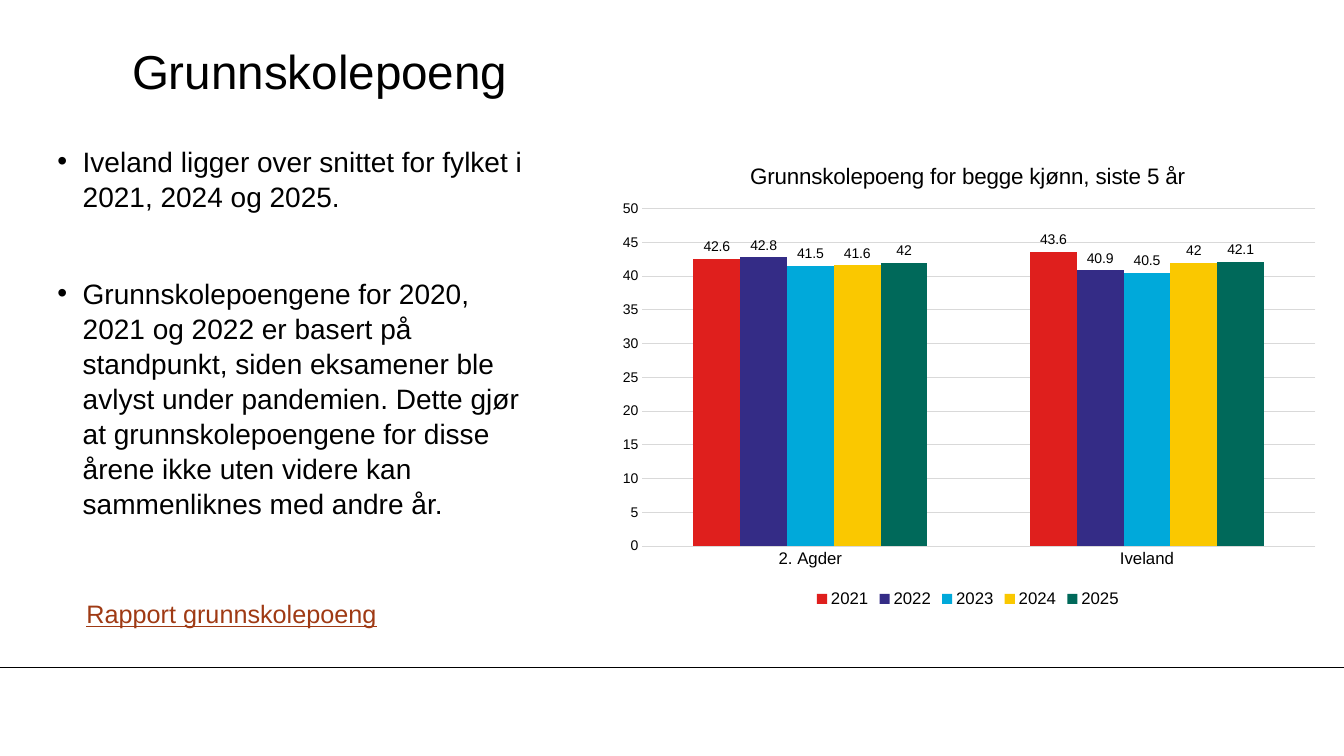
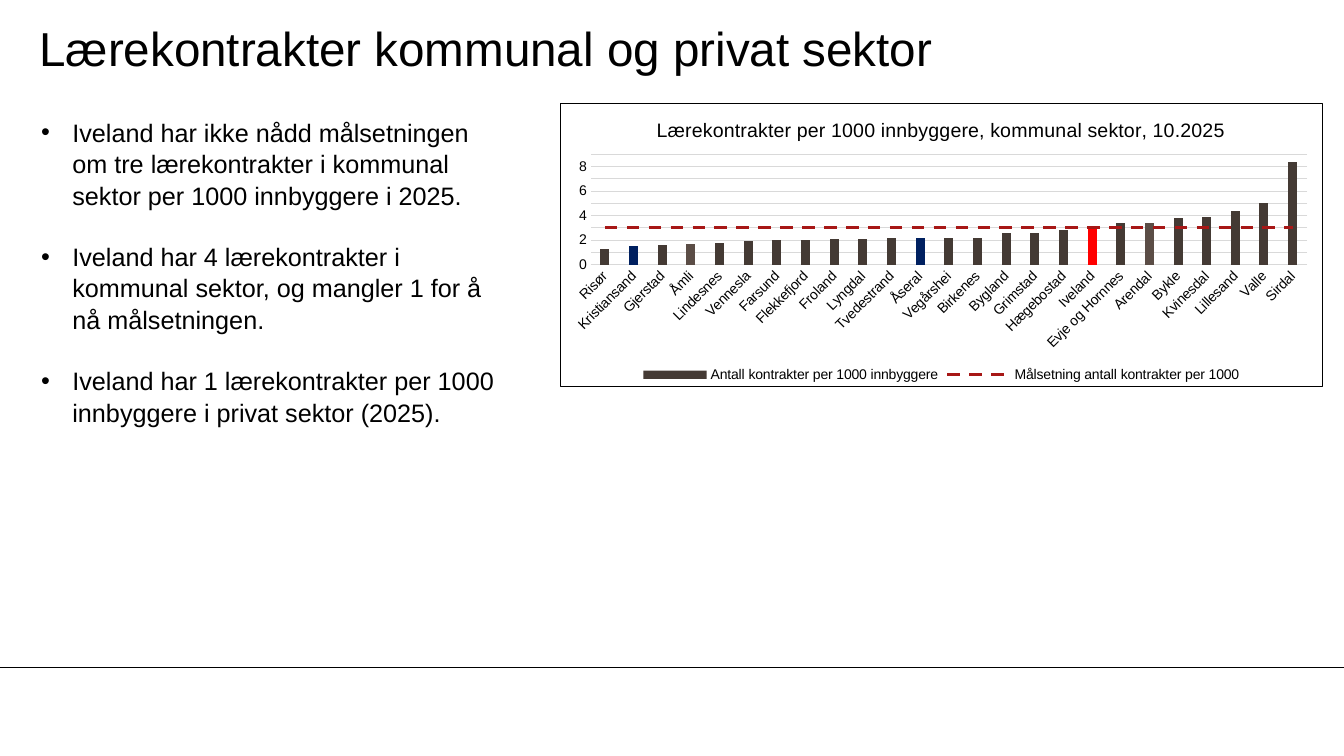
from pptx import Presentation
from pptx.chart.data import CategoryChartData
from pptx.dml.color import RGBColor
from pptx.enum.chart import XL_CHART_TYPE as ChartType, XL_LABEL_POSITION as LabelPosition
from pptx.enum.chart import XL_LEGEND_POSITION as LegendPosition, XL_MARKER_STYLE as MarkerStyle
from pptx.enum.chart import XL_TICK_MARK as TickMark
from pptx.enum.dml import MSO_LINE
from pptx.enum.shapes import MSO_CONNECTOR
from pptx.enum.text import MSO_ANCHOR, MSO_AUTO_SIZE, PP_ALIGN
from pptx.oxml.ns import qn
from pptx.oxml.xmlchemy import OxmlElement
from pptx.util import Inches, Pt

FONT = "Arial"
BLACK = RGBColor(0x00, 0x00, 0x00)
GRID = RGBColor(0xD9, 0xD9, 0xD9)
LINK = RGBColor(0x9F, 0x3A, 0x14)
BROWN = RGBColor(0x44, 0x3A, 0x34)
LIGHT_BROWN = RGBColor(0x5B, 0x4D, 0x46)
NAVY = RGBColor(0x00, 0x20, 0x60)
RED = RGBColor(0xFF, 0x00, 0x00)
TARGET_RED = RGBColor(0xA7, 0x17, 0x16)
YEAR_COLORS = [
    RGBColor(0xDF, 0x1F, 0x1D),
    RGBColor(0x34, 0x2C, 0x86),
    RGBColor(0x00, 0xA9, 0xDA),
    RGBColor(0xFA, 0xC8, 0x00),
    RGBColor(0x00, 0x69, 0x5A),
]

YEARS = {
    "2021": (42.6, 43.6),
    "2022": (42.8, 40.9),
    "2023": (41.5, 40.5),
    "2024": (41.6, 42),
    "2025": (42, 42.1),
}
CONTRACTS = {
    "Risør": 1.3, "Kristiansand": 1.5, "Gjerstad": 1.6, "Åmli": 1.7, "Lindesnes": 1.8,
    "Vennesla": 1.9, "Farsund": 2, "Flekkefjord": 2, "Froland": 2.1, "Lyngdal": 2.1,
    "Tvedestrand": 2.2, "Åseral": 2.2, "Vegårshei": 2.2, "Birkenes": 2.2, "Bygland": 2.6,
    "Grimstad": 2.6, "Hægebostad": 2.8, "Iveland": 2.9, "Evje og Hornnes": 3.4,
    "Arendal": 3.4, "Bykle": 3.8, "Kvinesdal": 3.9, "Lillesand": 4.4, "Valle": 5,
    "Sirdal": 8.4,
}
HIGHLIGHTS = {
    "Kristiansand": NAVY, "Åmli": LIGHT_BROWN, "Åseral": NAVY,
    "Iveland": RED, "Arendal": LIGHT_BROWN,
}
TARGET = 3

SLIDES = [
    {
        "title": "Grunnskolepoeng",
        "title_at": (1.31, 0.32),
        "body_at": (0.57, 1.42, 4.72, 4.34),
        "body": {"size": 20, "inset": 0, "indent": 0.25, "gap": 44.5},
        "bullets": [
            "Iveland ligger over snittet for fylket i 2021, 2024 og 2025.",
            "Grunnskolepoengene for 2020, 2021 og 2022 er basert på standpunkt, siden "
            "eksamener ble avlyst under pandemien. Dette gjør at grunnskolepoengene for "
            "disse årene ikke uten videre kan sammenliknes med andre år.",
        ],
        "chart_at": (6.01, 1.42, 7.18, 4.65),
        "plot_area": {"x": 0.05, "y": 0.14, "w": 0.93, "h": 0.72},
        "chart_title": "Grunnskolepoeng for begge kjønn, siste 5 år",
        "sizes": {"title": 16, "category": 12, "legend": 12},
        "scale": {"minimum_scale": 0, "maximum_scale": 50, "major_unit": 5},
        "categories": ["2. Agder", "Iveland"],
        "series": YEARS,
        "colors": YEAR_COLORS,
        "overlap": 0,
    },
    {
        "title": "Lærekontrakter kommunal og privat sektor",
        "title_at": (0.39, 0.1),
        "body_at": (0.31, 1.1, 4.7, 3.74),
        "body": {"size": 18, "inset": 0.1, "indent": 0.31, "gap": 21.5},
        "bullets": [
            "Iveland har ikke nådd målsetningen om tre lærekontrakter i kommunal sektor "
            "per 1000 innbyggere i 2025.",
            "Iveland har 4 lærekontrakter i kommunal sektor, og mangler 1 for å nå "
            "målsetningen.",
            "Iveland har 1 lærekontrakter per 1000 innbyggere i privat sektor (2025).",
        ],
        "chart_at": (5.55, 1.02, 7.57, 2.82),
        "plot_area": {"x": 0.04, "y": 0.18, "w": 0.94, "h": 0.39},
        "chart_title": "Lærekontrakter per 1000 innbyggere, kommunal sektor, 10.2025",
        "sizes": {"title": 14, "category": 10, "legend": 10},
        "scale": {"minimum_scale": 0, "maximum_scale": 9, "major_unit": 1},
        "categories": list(CONTRACTS),
        "series": {
            "Antall kontrakter per 1000 innbyggere": list(CONTRACTS.values()),
            "Målsetning antall kontrakter per 1000": [TARGET] * len(CONTRACTS),
        },
        "colors": [BROWN, TARGET_RED],
        "overlap": -27,
    },
]


def set_font(font, size, color=BLACK):
    font.name, font.size, font.bold = FONT, Pt(size), False
    font.color.rgb = color


def add_xml(parent, tag, **attributes):
    """Append an element with a prefixed tag and return it."""
    child = OxmlElement(tag)
    for name, value in attributes.items():
        child.set(name, str(value))
    parent.append(child)
    return child


presentation = Presentation()
presentation.slide_width, presentation.slide_height = Inches(13.33), Inches(7.5)
title_only = presentation.slide_layouts[5]
charts = []

for content in SLIDES:
    slide = presentation.slides.add_slide(title_only)

    title = slide.shapes.title
    title.left, title.top = map(Inches, content["title_at"])
    title.width, title.height = Inches(11.1), Inches(0.75)
    frame = title.text_frame
    frame.margin_left = frame.margin_right = frame.margin_top = frame.margin_bottom = 0
    frame.vertical_anchor = MSO_ANCHOR.MIDDLE
    frame.auto_size = MSO_AUTO_SIZE.NONE
    frame.text = content["title"]
    frame.paragraphs[0].alignment = PP_ALIGN.LEFT
    set_font(frame.paragraphs[0].runs[0].font, 34)

    style = content["body"]
    frame = slide.shapes.add_textbox(*map(Inches, content["body_at"])).text_frame
    frame.word_wrap = True
    frame.margin_left = frame.margin_right = Inches(style["inset"])
    frame.margin_top = frame.margin_bottom = Inches(style["inset"] / 2)
    for index, text in enumerate(content["bullets"]):
        paragraph = frame.add_paragraph() if index else frame.paragraphs[0]
        properties = paragraph._p.get_or_add_pPr()
        properties.set("marL", str(Inches(style["indent"])))
        properties.set("indent", str(-Inches(style["indent"])))
        add_xml(properties, "a:buFont", typeface=FONT)
        add_xml(properties, "a:buChar", char="•")
        paragraph.line_spacing = 1.04
        if index:
            paragraph.space_before = Pt(style["gap"])
        paragraph.text = text
        set_font(paragraph.runs[0].font, style["size"])

    data = CategoryChartData()
    data.categories = content["categories"]
    for name, values in content["series"].items():
        data.add_series(name, values)
    chart = slide.shapes.add_chart(
        ChartType.COLUMN_CLUSTERED, *map(Inches, content["chart_at"]), data
    ).chart
    charts.append(chart)
    sizes = content["sizes"]
    set_font(chart.font, 10)
    chart.has_title = True
    chart.chart_title.text_frame.text = content["chart_title"]
    set_font(chart.chart_title.text_frame.paragraphs[0].runs[0].font, sizes["title"])
    chart.has_legend = True
    chart.legend.position = LegendPosition.BOTTOM
    chart.legend.include_in_layout = False
    set_font(chart.legend.font, sizes["legend"])

    category_axis, value_axis = chart.category_axis, chart.value_axis
    for axis, size in ((category_axis, sizes["category"]), (value_axis, 10)):
        axis.major_tick_mark = axis.minor_tick_mark = TickMark.NONE
        set_font(axis.tick_labels.font, size)
    category_axis.format.line.color.rgb = GRID
    category_axis.format.line.width = Pt(0.75)
    value_axis.format.line.fill.background()
    value_axis.major_gridlines.format.line.color.rgb = GRID
    value_axis.major_gridlines.format.line.width = Pt(0.75)
    for name, value in content["scale"].items():
        setattr(value_axis, name, value)

    plot = chart.plots[0]
    plot.gap_width, plot.overlap, plot.vary_by_categories = 219, content["overlap"], False
    for series, color in zip(plot.series, content["colors"]):
        series.format.fill.solid()
        series.format.fill.fore_color.rgb = color

    plot_area = chart._chartSpace.chart.plotArea
    for old_layout in plot_area.findall(qn("c:layout")):
        plot_area.remove(old_layout)
    layout = OxmlElement("c:layout")
    plot_area.insert(0, layout)
    manual = add_xml(layout, "c:manualLayout")
    add_xml(manual, "c:layoutTarget", val="inner")
    for side in "xy":
        add_xml(manual, f"c:{side}Mode", val="edge")
    for side, share in content["plot_area"].items():
        add_xml(manual, f"c:{side}", val=share)

# The rule above the footer belongs to the shared layout
rule = slide.shapes.add_connector(
    MSO_CONNECTOR.STRAIGHT, 0, Inches(6.62), presentation.slide_width, Inches(6.62)
)
rule.line.color.rgb = BLACK
rule.line.width = Pt(0.75)
add_xml(rule._element.spPr, "a:effectLst")
title_only.shapes.element.append(rule._element)

# Slide 1: value labels and the report reference
points_chart, contracts_chart = charts
for series in points_chart.plots[0].series:
    labels = series.data_labels
    labels.show_value = True
    labels.position = LabelPosition.OUTSIDE_END
    set_font(labels.font, 10)

report = presentation.slides[0].shapes.add_textbox(
    Inches(0.76), Inches(5.89), Inches(3.3), Inches(0.4)
)
report.text_frame.word_wrap = True
report.text_frame.text = "Rapport grunnskolepoeng"
report_font = report.text_frame.paragraphs[0].runs[0].font
set_font(report_font, 18, LINK)
report_font.underline = True

# Slide 2: highlighted municipalities, the target as a dashed line, and a frame
columns = contracts_chart.plots[0]
for name, color in HIGHLIGHTS.items():
    fill = columns.series[0].points[list(CONTRACTS).index(name)].format.fill
    fill.solid()
    fill.fore_color.rgb = color

bar_chart = columns._element
target = bar_chart.findall(qn("c:ser"))[1]
for tag in ("c:invertIfNegative", "c:spPr"):
    for column_only in target.findall(qn(tag)):
        target.remove(column_only)
line_chart = OxmlElement("c:lineChart")
bar_chart.addnext(line_chart)
add_xml(line_chart, "c:grouping", val="standard")
add_xml(line_chart, "c:varyColors", val=0)
line_chart.append(target)
add_xml(line_chart, "c:marker", val=1)
for axis_id in bar_chart.findall(qn("c:axId")):
    add_xml(line_chart, "c:axId", val=axis_id.get("val"))

target_series = contracts_chart.plots[1].series[0]
target_series.smooth = False
target_series.marker.style = MarkerStyle.NONE
target_line = target_series.format.line
target_line.color.rgb = TARGET_RED
target_line.width = Pt(2.25)
target_line.dash_style = MSO_LINE.DASH

contracts_chart.value_axis.tick_labels.number_format = "0"
contracts_chart.value_axis.tick_labels.number_format_is_linked = False
label_text = contracts_chart.category_axis._element.find(qn("c:txPr"))
label_text.find(qn("a:bodyPr")).set("rot", str(-45 * 60000))

border = OxmlElement("c:spPr")
contracts_chart._chartSpace.chart.addnext(border)
outline = add_xml(border, "a:ln", w=Pt(0.75))
add_xml(add_xml(outline, "a:solidFill"), "a:srgbClr", val=BLACK)

presentation.save("out.pptx")
